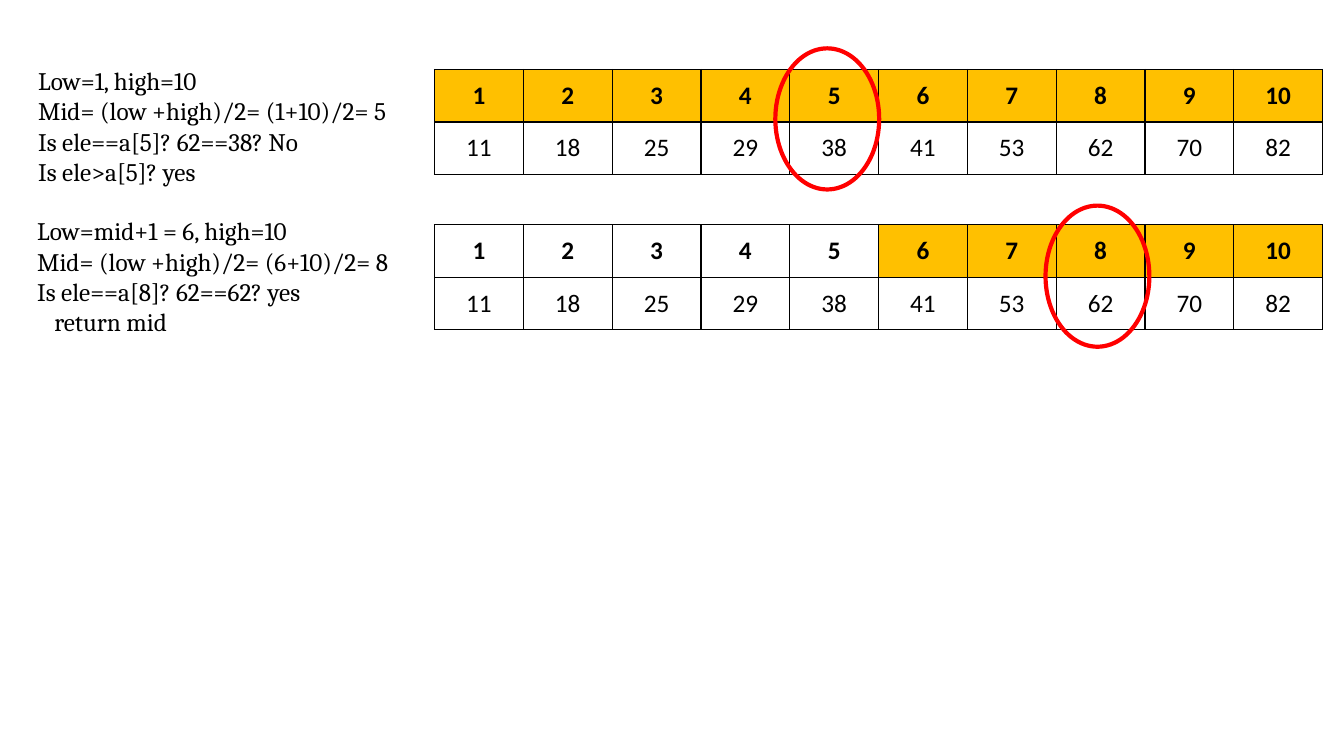
from lxml import etree
from pptx import Presentation
from pptx.dml.color import RGBColor
from pptx.enum.shapes import MSO_SHAPE
from pptx.enum.text import MSO_ANCHOR, PP_ALIGN
from pptx.oxml.ns import qn
from pptx.util import Inches, Pt

ELLIPSE = MSO_SHAPE.OVAL
MIDDLE = MSO_ANCHOR.MIDDLE
CENTER = PP_ALIGN.CENTER

BLACK, AMBER, RED = "000000", "FFC000", "FF0000"
VALUES = [11, 18, 25, 29, 38, 41, 53, 62, 70, 82]
# Each line of notes is (text, indent in inches); positions are (left, top).
STEPS = [
    {
        "notes": [
            ("Low=1, high=10", 0),
            ("Mid= (low +high)/2= (1+10)/2= 5", 0),
            ("Is ele==a[5]? 62==38? No", 0),
            ("Is ele>a[5]? yes", 0),
        ],
        "low": 1,
        "notes_at": (0.28, 0.6),
        "table_top": 0.69,
        "ring_at": (7.69, 0.48),
    },
    {
        "notes": [
            ("Low=mid+1 = 6, high=10", 0),
            ("Mid= (low +high)/2= (6+10)/2= 8", 0),
            ("Is ele==a[8]? 62==62? yes", 0),
            ("return mid", 0.17),
        ],
        "low": 6,
        "notes_at": (0.27, 2.09),
        "table_top": 2.23,
        "ring_at": (10.37, 2.04),
    },
]

SLIDE_SIZE = (13.33, 7.5)
NOTES_SIZE = (3.89, 1.31)
RING_SIZE = (1.03, 1.4)
TABLE_LEFT, TABLE_WIDTH, ROW_HEIGHT = 4.31, 8.81, 0.52
NOTES_FONT = {"name": "Cambria", "size": Pt(18), "bold": False}
CELL_FONT = {"name": "Calibri", "size": Pt(18), "bold": False}
HEADER_FONT = {**CELL_FONT, "bold": True}


def color(value):
    return RGBColor.from_string(value)


def add_run(paragraph, text, font_format):
    run = paragraph.add_run()
    run.text = text
    for name, value in font_format.items():
        setattr(run.font, name, value)
    run.font.color.rgb = color(BLACK)


def add_borders(cell):
    properties = cell._tc.get_or_add_tcPr()
    for side in ("a:lnL", "a:lnR", "a:lnT", "a:lnB"):
        line = etree.SubElement(properties, qn(side), w=str(Pt(1)))
        fill = etree.SubElement(line, qn("a:solidFill"))
        etree.SubElement(fill, qn("a:srgbClr"), val=BLACK)


def add_notes(slide, lines, position):
    box = slide.shapes.add_textbox(*map(Inches, position + NOTES_SIZE))
    frame = box.text_frame
    frame.word_wrap = True
    for index, (text, indent) in enumerate(lines):
        paragraph = frame.add_paragraph() if index else frame.paragraphs[0]
        if indent:
            paragraph._p.get_or_add_pPr().set("marL", str(Inches(indent)))
        add_run(paragraph, text, NOTES_FONT)


def fill_cell(cell, text, font_format, highlighted):
    add_borders(cell)
    if highlighted:
        cell.fill.solid()
        cell.fill.fore_color.rgb = color(AMBER)
    else:
        cell.fill.background()
    cell.vertical_anchor = MIDDLE
    paragraph = cell.text_frame.paragraphs[0]
    paragraph.alignment = CENTER
    add_run(paragraph, text, font_format)


def add_array(slide, top, low):
    """Draw positions above values, highlighting positions from low upwards."""
    frame = slide.shapes.add_table(
        2, len(VALUES), Inches(TABLE_LEFT), Inches(top),
        Inches(TABLE_WIDTH), Inches(2 * ROW_HEIGHT))
    table = frame.table
    for row in table.rows:
        row.height = Inches(ROW_HEIGHT)
    for column, value in enumerate(VALUES):
        position = column + 1
        fill_cell(table.cell(0, column), str(position), HEADER_FONT, position >= low)
        fill_cell(table.cell(1, column), str(value), CELL_FONT, False)


def add_ring(slide, position):
    ring = slide.shapes.add_shape(ELLIPSE, *map(Inches, position + RING_SIZE))
    ring.shadow.inherit = False
    ring.fill.background()
    ring.line.color.rgb = color(RED)
    ring.line.width = Pt(3)


def main():
    presentation = Presentation()
    presentation.slide_width, presentation.slide_height = map(Inches, SLIDE_SIZE)
    slide = presentation.slides.add_slide(presentation.slide_layouts[6])
    for step in STEPS:
        add_array(slide, step["table_top"], step["low"])
        add_notes(slide, step["notes"], step["notes_at"])
        add_ring(slide, step["ring_at"])
    presentation.save("out.pptx")


if __name__ == "__main__":
    main()
